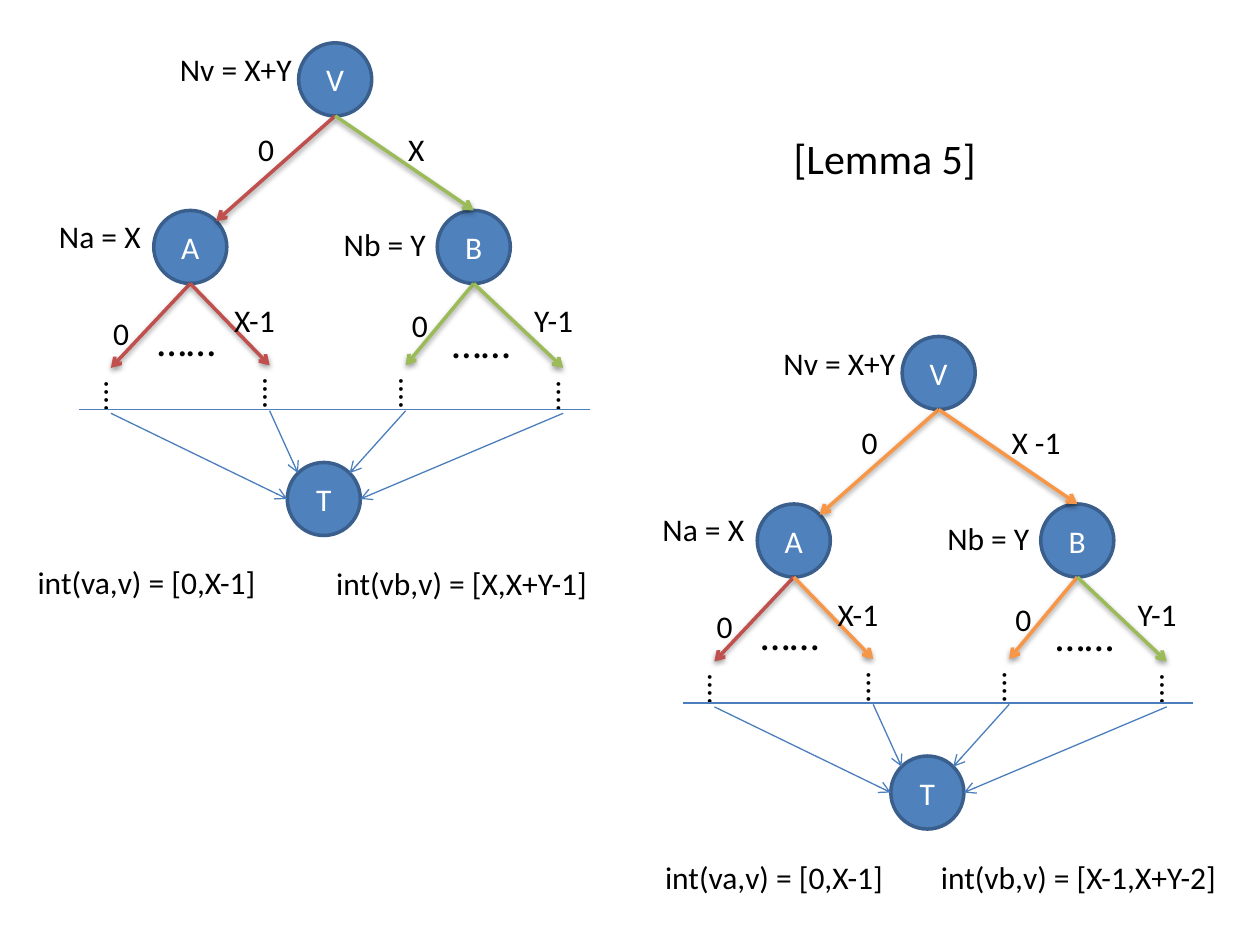
import math
from dataclasses import dataclass

from lxml import etree
from pptx import Presentation
from pptx import util as u
from pptx.dml.color import RGBColor
from pptx.enum import shapes, text
from pptx.oxml import ns

EMU_PER_PX = 9144  # 100 px to the inch
NODE_SIZE = 58
TOP, TOP_LEFT, LEFT, BOTTOM, RIGHT, TOP_RIGHT = 0, 1, 2, 4, 6, 7  # ellipse sites
LEAF_GAP = 36


@dataclass(frozen=True)
class Theme:
    font: str = "Calibri"
    body: int = 18
    large: int = 24
    ink: str = "000000"
    node_text: str = "FFFFFF"
    node_fill: str = "4F81BD"
    node_line: str = "3A5F8C"
    thin_line: str = "4B7EBC"
    red: str = "C0504D"
    green: str = "9BBB59"
    orange: str = "F79646"
    thick: float = 2
    thin: float = 0.75


THEME = Theme()


@dataclass(frozen=True)
class Label:
    text: str
    left: int
    top: int
    width: int
    height: int = 40
    size: int = THEME.body
    vertical: bool = False


@dataclass(frozen=True)
class Leaf:
    parent: str
    x: int
    y: int
    terminal_site: int


@dataclass(frozen=True)
class Tree:
    dx: int
    dy: int
    root_colors: tuple[str, str]
    leaf_colors: tuple[str, str, str, str]
    labels: tuple[Label, ...]


@dataclass(frozen=True)
class End:
    """A point, or a site on a node when node is set."""
    x: float
    y: float
    node: object = None
    site: int = 0


NODES = {"V": (237, 34), "B": (347, 167), "A": (122, 167), "T": (228, 367)}
LEAVES = (
    Leaf("A", 88, 292, LEFT),
    Leaf("A", 214, 290, TOP_LEFT),
    Leaf("B", 322, 290, TOP_RIGHT),
    Leaf("B", 447, 292, RIGHT),
)
SHARED_LABELS = (
    Label("Nv = X+Y", 133, 35, 110),
    Label("Na = X", 37, 167, 86),
    Label("Nb = Y", 263, 174, 86),
    Label("0", 195, 98, 33),
    Label("0", 80, 244, 33),
    Label("X-1", 176, 234, 54),
    Label("0", 317, 238, 33),
    Label("Y-1", 414, 234, 54),
    Label("……", 115, 245, 69, 50, THEME.large),
    Label("……", 349, 246, 69, 50, THEME.large),
)
TREES = (
    Tree(0, 0, (THEME.red, THEME.green),
         (THEME.red, THEME.red, THEME.green, THEME.green),
         (Label("X", 314, 98, 33),
          Label("int(va,v) = [0,X-1]", 20, 442, 196),
          Label("int(vb,v) = [X,X+Y-1]", 257, 443, 222))),
    Tree(479, 233, (THEME.orange, THEME.orange),
         (THEME.red, THEME.orange, THEME.orange, THEME.green),
         (Label("X -1", 314, 98, 60),
          Label("int(va,v) = [0,X-1]", 39, 443, 196),
          Label("int(vb,v) = [X-1,X+Y-2]", 258, 443, 244))),
)
TITLE = Label("[Lemma 5]", 620, 100, 166, 50, THEME.large)


def px(length: float) -> u.Emu:
    return u.Emu(round(length * EMU_PER_PX))


def rgb(color: str) -> RGBColor:
    return RGBColor.from_string(color)


def child(parent, tag: str, **attributes):
    values = {name: str(value) for name, value in attributes.items()}
    return etree.SubElement(parent, ns.qn(tag), values)


def set_font(paragraph, size: int, color: str) -> None:
    paragraph.font.name = THEME.font
    paragraph.font.size = u.Pt(size)
    paragraph.font.color.rgb = rgb(color)


def add_label(slide, label: Label, dx: int = 0, dy: int = 0) -> None:
    box = slide.shapes.add_textbox(px(label.left + dx), px(label.top + dy),
                                   px(label.width), px(label.height))
    frame = box.text_frame
    frame.word_wrap = False
    frame.auto_size = text.MSO_AUTO_SIZE.SHAPE_TO_FIT_TEXT
    frame.text = label.text
    set_font(frame.paragraphs[0], label.size, THEME.ink)
    if label.vertical:
        frame._txBody.bodyPr.set("vert", "vert")


def add_node(slide, name: str, left: int, top: int):
    node = slide.shapes.add_shape(shapes.MSO_SHAPE.OVAL, px(left), px(top),
                                  px(NODE_SIZE), px(NODE_SIZE))
    node.shadow.inherit = False
    node.fill.solid()
    node.fill.fore_color.rgb = rgb(THEME.node_fill)
    node.line.color.rgb = rgb(THEME.node_line)
    node.line.width = u.Pt(THEME.thick)
    frame = node.text_frame
    frame.vertical_anchor = text.MSO_ANCHOR.MIDDLE
    frame.text = name
    frame.paragraphs[0].alignment = text.PP_ALIGN.CENTER
    set_font(frame.paragraphs[0], THEME.body, THEME.node_text)
    return node


def node_end(node, site: int) -> End:
    """Sites run counter-clockwise from the top, an eighth of a turn apart."""
    radius, angle = NODE_SIZE / 2, site * math.pi / 4
    return End(node.left / EMU_PER_PX + radius * (1 - math.sin(angle)),
               node.top / EMU_PER_PX + radius * (1 - math.cos(angle)), node, site)


def add_line(slide, start: End, end: End, color: str, width: float,
             arrow: bool = True, shadow: bool = False) -> None:
    line = slide.shapes.add_connector(shapes.MSO_CONNECTOR.STRAIGHT, px(start.x),
                                      px(start.y), px(end.x), px(end.y))
    line.line.color.rgb = rgb(color)
    line.line.width = u.Pt(width)
    if arrow:
        child(line.line._get_or_add_ln(), "a:tailEnd", type="arrow")
    effects = child(line._element.spPr, "a:effectLst")
    if shadow:
        outer = child(effects, "a:outerShdw", blurRad=40000, dist=20000,
                      dir=5400000, rotWithShape=0)
        child(child(outer, "a:srgbClr", val=THEME.ink), "a:alpha", val=38000)
    joints = line._element.nvCxnSpPr.cNvCxnSpPr
    for tag, joint in (("a:stCxn", start), ("a:endCxn", end)):
        if joint.node is not None:
            child(joints, tag, id=joint.node.shape_id, idx=joint.site)


def add_tree(slide, tree: Tree) -> None:
    dx, dy = tree.dx, tree.dy
    nodes = {name: add_node(slide, name, left + dx, top + dy)
             for name, (left, top) in NODES.items()}
    root = node_end(nodes["V"], BOTTOM)
    for name, site, color in zip("AB", (TOP_RIGHT, TOP), tree.root_colors):
        add_line(slide, root, node_end(nodes[name], site), color, THEME.thick, shadow=True)
    for leaf, color in zip(LEAVES, tree.leaf_colors):
        x, y = leaf.x + dx, leaf.y + dy
        add_line(slide, node_end(nodes[leaf.parent], BOTTOM), End(x, y), color,
                 THEME.thick, shadow=True)
        add_line(slide, End(x, y + LEAF_GAP), node_end(nodes["T"], leaf.terminal_site),
                 THEME.thin_line, THEME.thin)
        add_label(slide, Label("....", x - 25, y, 50, 35, vertical=True))
    for label in SHARED_LABELS + tree.labels:
        add_label(slide, label, dx, dy)
    add_line(slide, End(63 + dx, 325 + dy), End(468 + dx, 325 + dy),
             THEME.thin_line, THEME.thin, arrow=False)


def main() -> None:
    deck = Presentation()
    deck.slide_width, deck.slide_height = px(1000), px(750)
    slide = deck.slides.add_slide(deck.slide_layouts[6])
    for tree in TREES:
        add_tree(slide, tree)
    add_label(slide, TITLE)
    deck.save("out.pptx")


if __name__ == "__main__":
    main()
